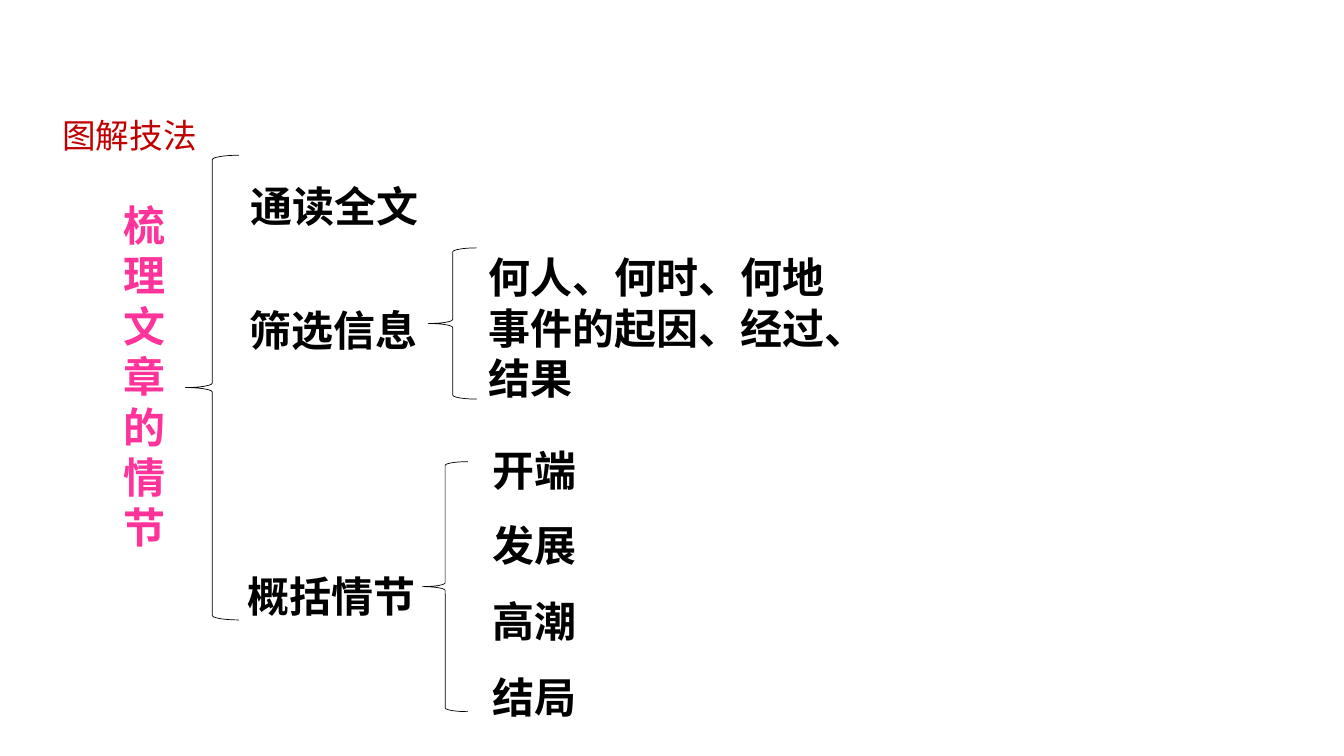
from dataclasses import dataclass

from lxml.etree import SubElement
from pptx import Presentation
from pptx.dml.color import RGBColor
from pptx.enum.shapes import MSO_AUTO_SHAPE_TYPE as ShapeType
from pptx.enum.text import MSO_ANCHOR as Anchor
from pptx.oxml.ns import qn
from pptx.util import Inches, Pt

CELL = 0.1  # side of a grid cell in inches
COLUMNS, ROWS = 133.3, 75


@dataclass(frozen=True)
class Theme:
    heading_font: str = "Noto Sans CJK SC"
    body_font: str = "Arial"
    heading_size: int = 24
    body_size: int = 30
    brace_line: float = 0.5
    loose_spacing: float = 1.5
    heading: RGBColor = RGBColor(0xC0, 0x00, 0x00)
    topic: RGBColor = RGBColor(0xFF, 0x33, 0x99)
    ink: RGBColor = RGBColor(0x00, 0x00, 0x00)


THEME = Theme()


@dataclass(frozen=True)
class Box:
    """A rectangle counted in grid columns and rows."""
    left: float
    top: float
    width: float
    height: float

    def inner(self, left, top, width, height):
        return Box(self.left + left, self.top + top, width, height)

    def lengths(self):
        cells = (self.left, self.top, self.width, self.height)
        return [Inches(round(cell * CELL, 2)) for cell in cells]


def add_text(slide, box, lines, color=THEME.ink, font=THEME.body_font,
             size=THEME.body_size, bold=True, spacing=None):
    frame = slide.shapes.add_textbox(*box.lengths()).text_frame
    frame.word_wrap = True
    frame.vertical_anchor = Anchor.TOP
    for index, line in enumerate(lines):
        paragraph = frame.add_paragraph() if index else frame.paragraphs[0]
        if spacing:
            paragraph.line_spacing = spacing
        run = paragraph.add_run()
        run.text = line
        run.font.name = font
        run.font.size = Pt(size)
        run.font.bold = bold
        run.font.color.rgb = color
        # East Asian characters use the same typeface
        properties = run._r.get_or_add_rPr()
        SubElement(properties, qn("a:ea"), typeface=font)


def add_brace(slide, box):
    shape = slide.shapes.add_shape(ShapeType.LEFT_BRACE, *box.lengths())
    shape.shadow.inherit = False
    shape.fill.background()
    shape.line.color.rgb = THEME.ink
    shape.line.width = Pt(THEME.brace_line)


def add_heading(slide, box):
    add_text(slide, box, ["图解技法"], THEME.heading, THEME.heading_font,
             THEME.heading_size, bold=False)


def add_topic(slide, box):
    # The narrow column stacks one character per line
    add_text(slide, box.inner(0, 3.9, 6.6, 36.4), ["梳理文章的情节"], THEME.topic)
    add_brace(slide, box.inner(7.1, 0, 5.3, box.height))


def add_step(slide, box, label):
    add_text(slide, box, [label], spacing=THEME.loose_spacing)


def add_information(slide, box):
    add_step(slide, box.inner(0, 2.7, 20.1, 7.6), "筛选信息")
    add_brace(slide, box.inner(18.7, 0.1, 4.8, 15))
    add_text(slide, box.inner(23.7, 0, 37.7, box.height),
             ["何人、何时、何地事件的起因、经过、结果"])


def add_plot(slide, box):
    add_step(slide, box.inner(0, 12.5, 20.1, 7.6), "概括情节")
    add_brace(slide, box.inner(18.3, 4.7, 4.5, 24.8))
    add_text(slide, box.inner(24.3, 0, 13.4, box.height),
             ["开端", "发展", "高潮", "结局"], spacing=THEME.loose_spacing)


def main():
    presentation = Presentation()
    presentation.slide_width = Inches(COLUMNS * CELL)
    presentation.slide_height = Inches(ROWS * CELL)
    slide = presentation.slides.add_slide(presentation.slide_layouts[6])

    # Heading and main topic
    add_heading(slide, Box(5.2, 10.9, 20.2, 5))
    add_topic(slide, Box(11.3, 15.4, 12.4, 46.1))

    # Three steps, the last two with their own branches
    add_step(slide, Box(23.9, 14.9, 20.1, 8.6), "通读全文")
    add_information(slide, Box(23.8, 24.5, 61.4, 16.2))
    add_plot(slide, Box(23.6, 41.1, 37.7, 31.3))

    presentation.save("out.pptx")


if __name__ == "__main__":
    main()
